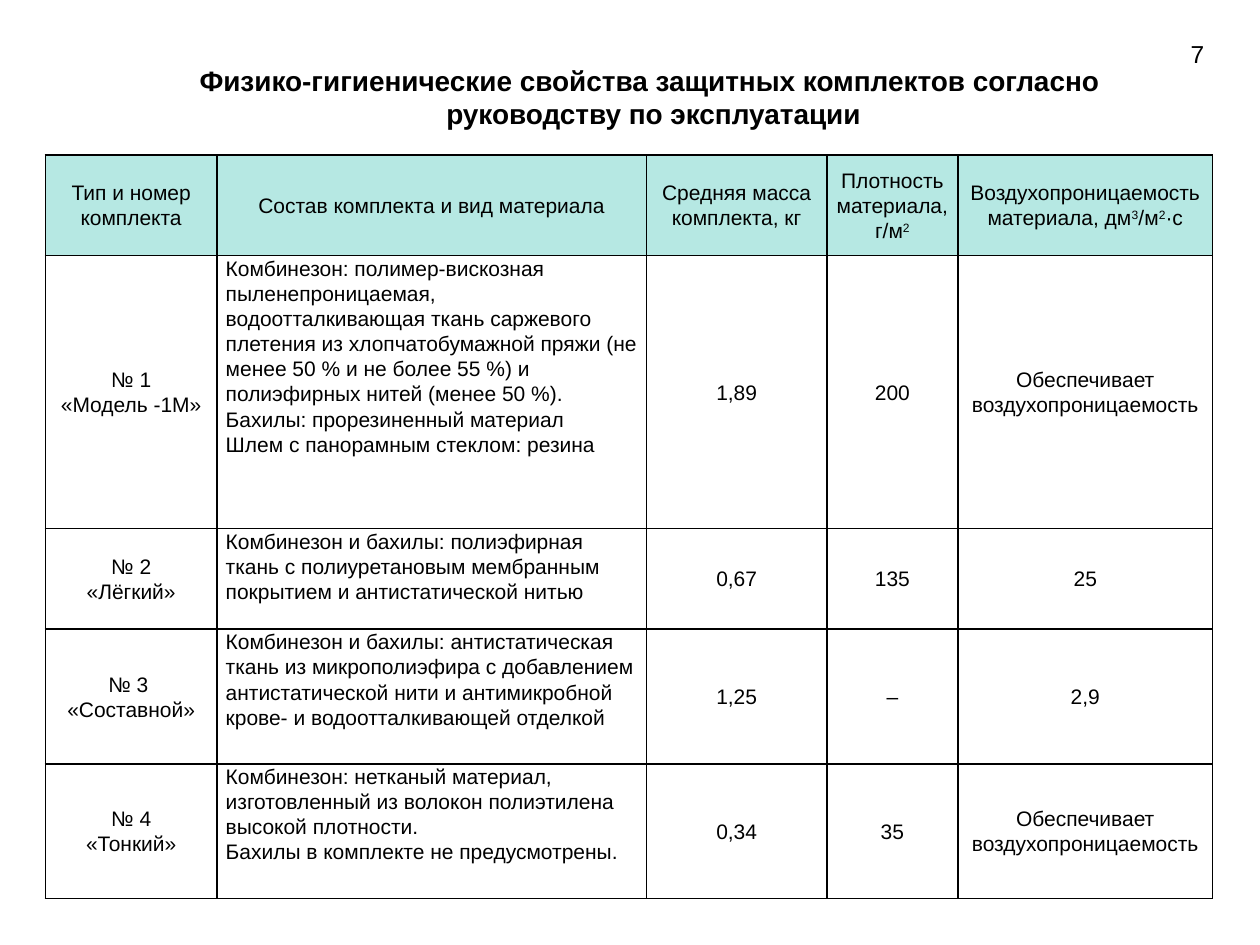
"""Build a slide with a table of protective suit properties."""
from lxml.etree import SubElement
from pptx import Presentation
from pptx.dml.color import RGBColor
from pptx.enum.text import MSO_ANCHOR as Anchor, PP_ALIGN as Align
from pptx.oxml.ns import qn
from pptx.util import Pt

BLACK = RGBColor(0x00, 0x00, 0x00)
WHITE = RGBColor(0xFF, 0xFF, 0xFF)
MINT = RGBColor(0xB6, 0xE8, 0xE3)

TITLE = ["Физико-гигиенические свойства защитных комплектов согласно ",
         "руководству по эксплуатации"]
WIDTHS = [98, 245.5, 103, 75, 145.5]
HEIGHTS = [57.5, 156, 57.5, 77, 77]
COMPOSITION = 1
BREATHABLE = "Обеспечивает воздухопроницаемость"
ROWS = [
    ["Тип и номер комплекта", "Состав комплекта и вид материала",
     "Средняя масса комплекта, кг", "Плотность материала, г/м^2^",
     "Воздухопроницаемость материала, дм^3^/м^2^·с"],
    ["№ 1\n«Модель -1М»",
     "Комбинезон: полимер-вискозная пыленепроницаемая, водоотталкивающая ткань "
     "саржевого плетения из хлопчатобумажной пряжи (не менее 50 % и не более 55 %) "
     "и полиэфирных нитей (менее 50 %).\nБахилы: прорезиненный материал\n"
     "Шлем с панорамным стеклом: резина", "1,89", "200", BREATHABLE],
    ["№ 2\n«Лёгкий»",
     "Комбинезон и бахилы: полиэфирная ткань с полиуретановым мембранным "
     "покрытием и антистатической нитью", "0,67", "135", "25"],
    ["№ 3 \n«Составной»",
     "Комбинезон и бахилы: антистатическая ткань из микрополиэфира с добавлением "
     "антистатической нити и антимикробной крове- и водоотталкивающей отделкой",
     "1,25", "–", "2,9"],
    ["№ 4\n«Тонкий»",
     "Комбинезон: нетканый материал, изготовленный из волокон полиэтилена высокой "
     "плотности.\nБахилы в комплекте не предусмотрены.", "0,34", "35", BREATHABLE],
]


def write_text(frame, lines, size=12, bold=False, align=Align.CENTER, spacing=None, indent=None):
    """Fill a frame with paragraphs; text between carets is superscript."""
    frame.word_wrap = True
    for number, line in enumerate(lines):
        para = frame.add_paragraph() if number else frame.paragraphs[0]
        para.alignment = align
        para.line_spacing = spacing
        if indent:
            para._p.get_or_add_pPr().set("indent", str(Pt(indent)))
        for position, part in enumerate(line.split("^")):
            if not part:
                continue
            span = para.add_run()
            span.text = part
            span.font.name = "Arial"
            span.font.size = Pt(size)
            span.font.bold = bold
            span.font.color.rgb = BLACK
            if position % 2:
                span._r.get_or_add_rPr().set("baseline", "30000")


def add_text(page, lines, left, top, width, height, **style):
    """Add a text box with formatted paragraphs."""
    box = page.shapes.add_textbox(Pt(left), Pt(top), Pt(width), Pt(height))
    write_text(box.text_frame, lines, **style)


def draw_borders(cell, width=1):
    """Draw a solid line on each side of a cell."""
    properties = cell._tc.get_or_add_tcPr()
    for side in ("lnL", "lnR", "lnT", "lnB"):
        line = SubElement(properties, qn(f"a:{side}"), w=str(Pt(width)))
        fill = SubElement(line, qn("a:solidFill"))
        SubElement(fill, qn("a:srgbClr"), val=str(BLACK))


def fill_cell(cell, text, colour, is_list):
    """Set the borders, fill, margins and text of a cell."""
    draw_borders(cell)
    cell.fill.solid()
    cell.fill.fore_color.rgb = colour
    cell.margin_left = cell.margin_right = Pt(5)
    cell.margin_top = cell.margin_bottom = Pt(0)
    cell.vertical_anchor = Anchor.TOP if is_list else Anchor.MIDDLE
    write_text(cell.text_frame, text.split("\n"), spacing=1.07,
               align=Align.LEFT if is_list else Align.CENTER)


def add_suit_table(page, left, top):
    """Add the table of suit properties."""
    frame = page.shapes.add_table(len(ROWS), len(WIDTHS), Pt(left), Pt(top),
                                  Pt(sum(WIDTHS)), Pt(sum(HEIGHTS)))
    table = frame.table
    for column, width in zip(table.columns, WIDTHS):
        column.width = Pt(width)
    for row, height in zip(table.rows, HEIGHTS):
        row.height = Pt(height)
    for row, texts in enumerate(ROWS):
        for column, text in enumerate(texts):
            fill_cell(table.cell(row, column), text, WHITE if row else MINT,
                      is_list=row > 0 and column == COMPOSITION)


def main():
    """Build and save the deck."""
    deck = Presentation()
    deck.slide_width, deck.slide_height = Pt(720), Pt(540)
    page = deck.slides.add_slide(deck.slide_layouts[6])
    add_text(page, ["7"], 667, 19, 34.5, 22, size=14)
    add_text(page, TITLE, 26, 32.5, 659.5, 46, size=16, bold=True, indent=35.5)
    add_suit_table(page, 26, 88.5)
    deck.save("out.pptx")


if __name__ == "__main__":
    main()
